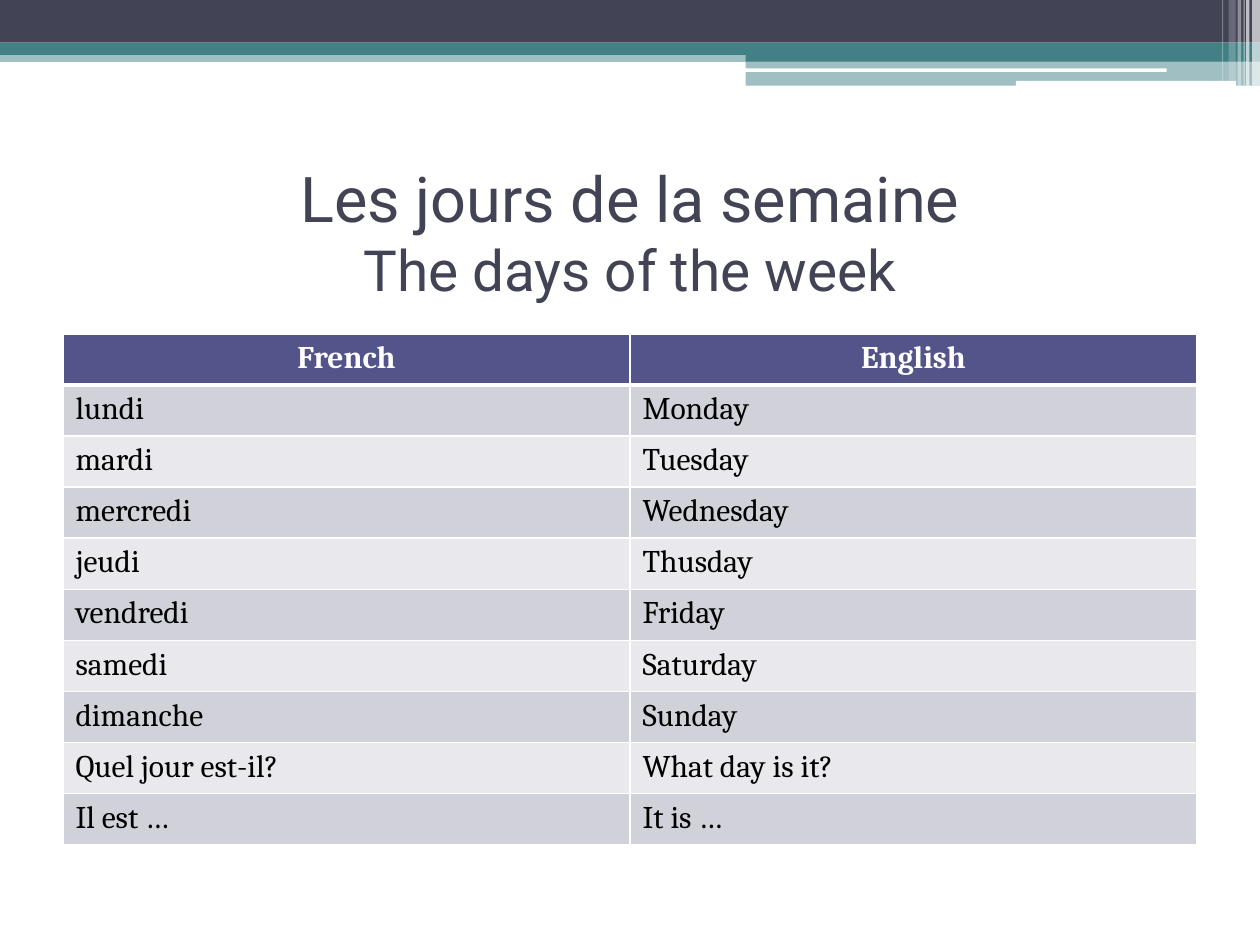
from lxml.etree import SubElement
from pptx import Presentation
from pptx.dml.color import RGBColor
from pptx.enum.shapes import MSO_SHAPE
from pptx.enum.text import MSO_ANCHOR, PP_ALIGN
from pptx.oxml.ns import qn
from pptx.util import Cm, Pt

# Content
TITLE = [("Les jours de la semaine", 36), ("The days of the week", 32.4)]
DAYS = [
    ("French", "English"),
    ("lundi", "Monday"),
    ("mardi", "Tuesday"),
    ("mercredi", "Wednesday"),
    ("jeudi", "Thusday"),
    ("vendredi", "Friday"),
    ("samedi", "Saturday"),
    ("dimanche", "Sunday"),
    ("Quel jour est-il?", "What day is it?"),
    ("Il est …", "It is …"),
]

# Colours
DARK, TEAL, WHITE, BLACK = "424456", "438086", "FFFFFF", "000000"
HEAD, ODD, EVEN = "53548A", "D1D1DA", "E9E9ED"

# Top bands: left, top, width, height in cm, colour, opacity in percent
BANDS = [
    (0, 1.02, 25.4, 0.23, TEAL, 50),
    (0, 0, 25.4, 0.86, DARK, 100),
    (0, 0.86, 25.4, 0.25, TEAL, 100),
    (15.03, 0.99, 10.37, 0.25, TEAL, 100),
    (15.03, 1.23, 10.37, 0.5, TEAL, 50),
]
BARS = [(15.01, 1.38, 8.51, 0.07), (20.48, 1.63, 4.44, 0.1)]
# Stripes at the right: left, width, height in cm, opacity
STRIPES = [
    (25.24, 0.16, 1.73, 65),
    (25.12, 0.07, 1.73, 65),
    (25.07, 0.02, 1.73, 60),
    (24.95, 0.07, 1.73, 40),
    (24.77, 0.14, 1.63, 20),
    (24.64, 0.02, 1.63, 30),
]


def paint(fill, hue, alpha=100):
    fill.solid()
    fill.fore_color.rgb = RGBColor.from_string(hue)
    if alpha < 100:
        tint = fill._xPr.find(".//" + qn("a:srgbClr"))
        SubElement(tint, qn("a:alpha"), val=str(alpha * 1000))


def band(left, top, width, height, hue, alpha=100, kind=MSO_SHAPE.RECTANGLE):
    box = slide.shapes.add_shape(kind, Cm(left), Cm(top), Cm(width), Cm(height))
    box.shadow.inherit = False
    box.line.fill.background()
    paint(box.fill, hue, alpha)


def write(para, text, size=18, font="Cambria", hue=BLACK, bold=False, align=PP_ALIGN.LEFT):
    para.alignment = align
    run = para.add_run()
    run.text = text
    run.font.size, run.font.name, run.font.bold = Pt(size), font, bold
    run.font.color.rgb = RGBColor.from_string(hue)


def edge(cell, side, width):
    line = SubElement(cell._tc.get_or_add_tcPr(), qn("a:ln" + side), w=str(Pt(width)))
    SubElement(SubElement(line, qn("a:solidFill")), qn("a:srgbClr"), val=WHITE)


deck = Presentation()
deck.slide_width, deck.slide_height = Cm(25.4), Cm(19.05)
slide = deck.slides.add_slide(deck.slide_layouts[5])

# Decoration
for item in BANDS:
    band(*item)
for item in BARS:
    band(*item, WHITE, kind=MSO_SHAPE.ROUNDED_RECTANGLE)
for left, width, height, alpha in STRIPES:
    band(left, 0, width, height, WHITE, alpha)

# Title
title = slide.shapes.title
title.left, title.top, title.width, title.height = Cm(1.27), Cm(3.18), Cm(22.86), Cm(2.97)
title.text_frame.vertical_anchor = MSO_ANCHOR.MIDDLE
para = title.text_frame.paragraphs[0]
for i, (text, size) in enumerate(TITLE):
    if i:
        para.add_line_break()
    write(para, text, size=size, font="Roboto", hue=DARK, align=PP_ALIGN.CENTER)

# Table
frame = slide.shapes.add_table(len(DAYS), 2, Cm(1.27), Cm(6.73), Cm(22.86), Cm(10.3))
grid = frame.table
for r, pair in enumerate(DAYS):
    top = r == 0
    look = dict(hue=WHITE, bold=True, align=PP_ALIGN.CENTER) if top else {}
    for c, text in enumerate(pair):
        cell = grid.cell(r, c)
        for side in "LRTB":
            thick = (top and side == "B") or (r == 1 and side == "T")
            edge(cell, side, 3 if thick else 1)
        paint(cell.fill, HEAD if top else ODD if r % 2 else EVEN)
        write(cell.text_frame.paragraphs[0], text, **look)

deck.save("out.pptx")
